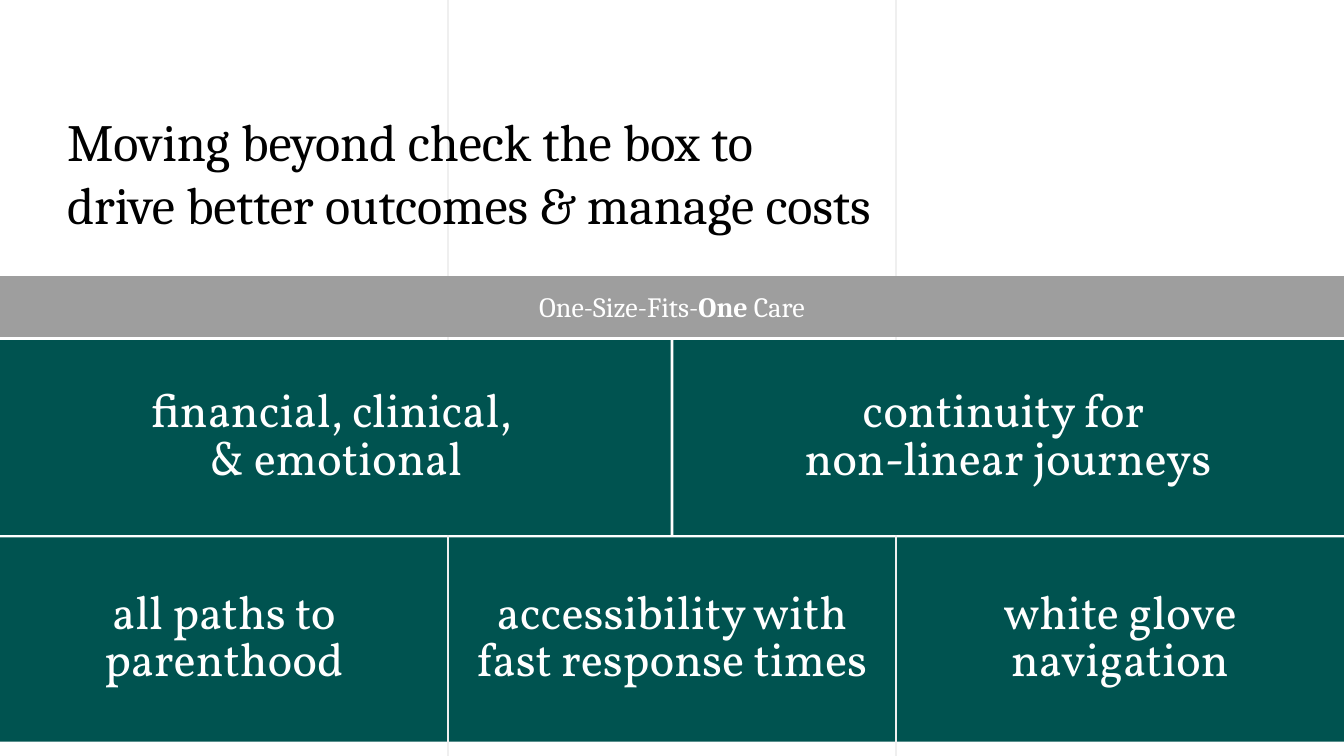
from dataclasses import dataclass

from lxml import etree
from pptx import Presentation
from pptx.dml.color import RGBColor
from pptx.enum.shapes import MSO_CONNECTOR as CONN, MSO_SHAPE as SHAPE
from pptx.enum.text import MSO_ANCHOR as ANCHOR, PP_ALIGN as ALIGN
from pptx.oxml.ns import qn
from pptx.util import Cm, Pt

W, H = 25.4, 14.29
TEAL, GREY, RULE, WHITE, BLACK = "005350", "9E9E9E", "EFEFEF", "FFFFFF", "000000"
TITLE = {"name": "Cambria", "size": Pt(28)}
BANNER = {"name": "Cambria", "size": Pt(15)}
BODY = {"name": "Vollkorn", "size": Pt(25)}


@dataclass
class Box:
    x: float
    y: float
    w: float
    h: float


@dataclass
class Row:
    top: float
    height: float
    gap: float
    text_top: float
    text_width: float
    labels: list[list[str]]


ROWS = [
    Row(6.43, 3.68, 0.05, 7.44, 9.1,
        [["financial, clinical, ", "& emotional"],
         ["continuity for ", "non-linear journeys"]]),
    Row(10.16, 3.86, 0, 11.25, 7.72,
        [["all paths to parenthood"],
         ["accessibility with fast response times"],
         ["white glove navigation"]]),
]


def rgb(value: str) -> RGBColor:
    return RGBColor.from_string(value)


def add_rect(s, box: Box, color: str):
    sp = s.shapes.add_shape(SHAPE.RECTANGLE, Cm(box.x), Cm(box.y), Cm(box.w), Cm(box.h))
    sp.shadow.inherit = False
    sp.fill.solid()
    sp.fill.fore_color.rgb = rgb(color)
    sp.line.fill.background()
    return sp


def write(sp, lines: list[list[tuple[str, bool]]], font: dict, color: str,
          align=ALIGN.CENTER, spacing: float = 1.0) -> None:
    tf = sp.text_frame
    frame = {"word_wrap": True, "vertical_anchor": ANCHOR.MIDDLE, "margin_left": 0,
             "margin_right": 0, "margin_top": 0, "margin_bottom": 0}
    for key, value in frame.items():
        setattr(tf, key, value)
    for i, line in enumerate(lines):
        p = tf.paragraphs[0] if i == 0 else tf.add_paragraph()
        p.alignment, p.line_spacing = align, spacing
        for text, bold in line:
            r = p.add_run()
            r.text = text
            for key, value in {**font, "bold": bold}.items():
                setattr(r.font, key, value)
            r.font.color.rgb = rgb(color)


def add_text(s, box: Box, lines: list[str], font: dict, color: str, **layout) -> None:
    sp = s.shapes.add_textbox(Cm(box.x), Cm(box.y), Cm(box.w), Cm(box.h))
    write(sp, [[(line, False)] for line in lines], font, color, **layout)


def add_rule(s, x: float) -> None:
    ln = s.shapes.add_connector(CONN.STRAIGHT, Cm(x), Cm(0), Cm(x), Cm(H))
    ln.line.color.rgb = rgb(RULE)
    ln.line.width = Pt(0.75)
    etree.SubElement(ln._element.spPr, qn("a:effectLst"))


def add_tiles(s, row: Row) -> None:
    pitch = W / len(row.labels)
    for i in range(len(row.labels)):
        left = i * pitch + (row.gap / 2 if i else 0)
        right = (i + 1) * pitch - (row.gap / 2 if i < len(row.labels) - 1 else 0)
        add_rect(s, Box(left, row.top, right - left, row.height), TEAL)


def add_labels(s, row: Row) -> None:
    pitch = W / len(row.labels)
    for i, lines in enumerate(row.labels):
        left = (i + 0.5) * pitch - row.text_width / 2
        add_text(s, Box(left, row.text_top, row.text_width, 1.65), lines, BODY, WHITE,
                 spacing=0.85)


def main() -> None:
    prs = Presentation()
    prs.slide_width, prs.slide_height = Cm(W), Cm(H)
    s = prs.slides.add_slide(prs.slide_layouts[6])
    two_up, three_up = ROWS

    # Lower tiles, with the column rules over them
    add_tiles(s, three_up)
    for i in (1, 2):
        add_rule(s, i * W / 3)

    # Upper tiles cover the rules
    add_tiles(s, two_up)
    for row in ROWS:
        add_labels(s, row)

    # Title
    add_text(s, Box(1.27, 1.8, 17.7, 2.9),
             ["Moving beyond check the box to", "drive better outcomes & manage costs"],
             TITLE, BLACK, align=ALIGN.LEFT)

    # Banner
    banner = add_rect(s, Box(0, 5.22, W, 1.15), GREY)
    write(banner, [[("One-Size-Fits-", False), ("One", True), (" Care", False)]],
          BANNER, WHITE)

    prs.save("out.pptx")


if __name__ == "__main__":
    main()
